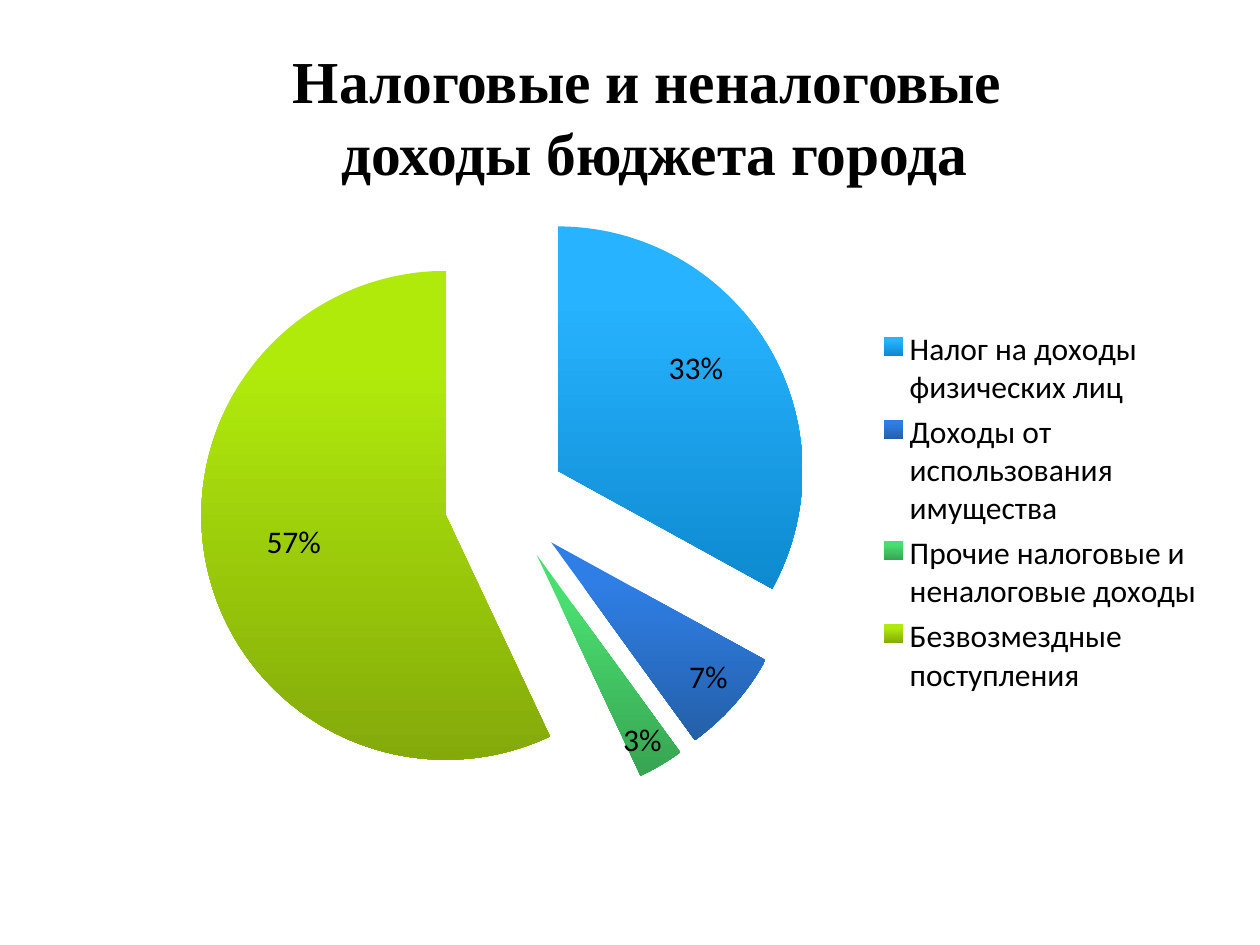
"""Build the slide showing the structure of city budget revenue."""
import pptx
import pptx.chart.data
import pptx.dml.color
import pptx.enum.chart
import pptx.enum.text
import pptx.oxml
import pptx.oxml.ns
import pptx.util
from pptx.util import Cm, Pt

COLOURS = {
    "text": "000000",
    "income": ("27B3FF", "0E8AD0"),
    "property": ("2F7EE5", "2460A9"),
    "other": ("4ADE70", "38A452"),
    "grants": ("B0EA0B", "84AA0A"),
}
REVENUES = [
    ("Налог на доходы физических лиц", 33, "income", (0.03, -0.06)),
    ("Доходы от  использования имущества", 7, "property", (0.06, 0.08)),
    ("Прочие налоговые и неналоговые доходы", 3, "other", (0.04, 0.12)),
    ("Безвозмездные поступления", 57, "grants", (-0.03, 0)),
]
TITLE_LINES = ["Налоговые и неналоговые ", "доходы бюджета города"]
PERCENT = '0"%"'


def rgb(value):
    """Turn a hex string into a colour."""
    return pptx.dml.color.RGBColor.from_string(value)


def chart_xml(markup):
    """Parse one element of the chart namespace."""
    namespace = pptx.oxml.ns.nsdecls("c")
    return pptx.oxml.parse_xml(markup.replace(">", f" {namespace}>", 1))


def layout_xml(target="", **fractions):
    """Make a manual layout from fractions of the chart area."""
    parts = f'<c:layoutTarget val="{target}"/>' if target else ""
    if "w" in fractions:
        parts += '<c:xMode val="edge"/><c:yMode val="edge"/>'
    parts += "".join(f'<c:{key} val="{value}"/>' for key, value in fractions.items())
    return chart_xml(f"<c:layout><c:manualLayout>{parts}</c:manualLayout></c:layout>")


def place_part(part, layout, follower):
    """Put a layout into a chart part before the named follower."""
    for old in part.findall(pptx.oxml.ns.qn("c:layout")):
        part.remove(old)
    part.find(pptx.oxml.ns.qn(follower)).addprevious(layout)


def write_title(page):
    """Write the two-line heading into the title placeholder."""
    title = page.shapes.title
    title.left, title.top, title.width, title.height = Cm(3.5), Cm(0.74), Cm(19.4), Cm(3.18)
    frame = title.text_frame
    frame.text = "\n".join(TITLE_LINES)
    frame.word_wrap = True
    frame.vertical_anchor = pptx.enum.text.MSO_ANCHOR.MIDDLE
    for paragraph in frame.paragraphs:
        paragraph.alignment = pptx.enum.text.PP_ALIGN.CENTER
        paragraph.font.name = "Times New Roman"
        paragraph.font.size = Pt(34)
        paragraph.font.bold = True
        paragraph.font.color.rgb = rgb(COLOURS["text"])


def paint_slice(point, colours):
    """Shade a slice from top to bottom."""
    fill = point.format.fill
    fill.gradient()
    fill.gradient_angle = 270
    for stop, colour, position in zip(fill.gradient_stops, colours, (0.2, 1)):
        stop.color.rgb = rgb(colour)
        stop.position = position
    point.format.line.fill.background()


def place_labels(series):
    """Shift each slice label away from the slice centre."""
    for index, revenue in enumerate(REVENUES):
        label = series.points[index].data_label
        label.position = pptx.enum.chart.XL_LABEL_POSITION.CENTER
    labels = series._element.findall(".//" + pptx.oxml.ns.qn("c:dLbl"))
    for label, (_, _, _, (x, y)) in zip(labels, REVENUES):
        label.insert(1, layout_xml(x=x, y=y))
        label.insert(2, chart_xml(f"<c:numFmt formatCode='{PERCENT}' sourceLinked='0'></c:numFmt>"))


def add_revenue_pie(page):
    """Add the exploded pie with its legend."""
    data = pptx.chart.data.CategoryChartData(number_format=PERCENT)
    data.categories = [revenue[0] for revenue in REVENUES]
    data.add_series("Series 1", [revenue[1] for revenue in REVENUES])
    chart = page.shapes.add_chart(
        pptx.enum.chart.XL_CHART_TYPE.PIE, Cm(2.49), Cm(3.53), Cm(22), Cm(13.59), data
    ).chart
    chart.has_title = False
    chart.font.name = "Calibri"
    chart.font.size = Pt(18)
    chart.font.color.rgb = rgb(COLOURS["text"])
    chart.has_legend = True
    chart.legend.position = pptx.enum.chart.XL_LEGEND_POSITION.RIGHT
    chart.legend.include_in_layout = False
    plot = chart.plots[0]
    plot.vary_by_categories = True
    series = plot.series[0]
    for index, revenue in enumerate(REVENUES):
        paint_slice(series.points[index], COLOURS[revenue[2]])
    place_labels(series)
    first_point = series._element.find(pptx.oxml.ns.qn("c:dPt"))
    first_point.addprevious(chart_xml('<c:explosion val="25"></c:explosion>'))
    plot_area = plot._element.getparent()
    place_part(plot_area, layout_xml("inner", x=0.07, y=0.03, w=0.56, h=0.91), "c:pieChart")
    place_part(chart.legend._element, layout_xml(x=0.69, y=0.22, w=0.3, h=0.56), "c:overlay")


def main():
    """Create and save the deck."""
    deck = pptx.Presentation()
    deck.slide_width, deck.slide_height = Cm(25.4), Cm(19.05)
    page = deck.slides.add_slide(deck.slide_layouts[5])
    add_revenue_pie(page)
    write_title(page)
    deck.save("out.pptx")


if __name__ == "__main__":
    main()
